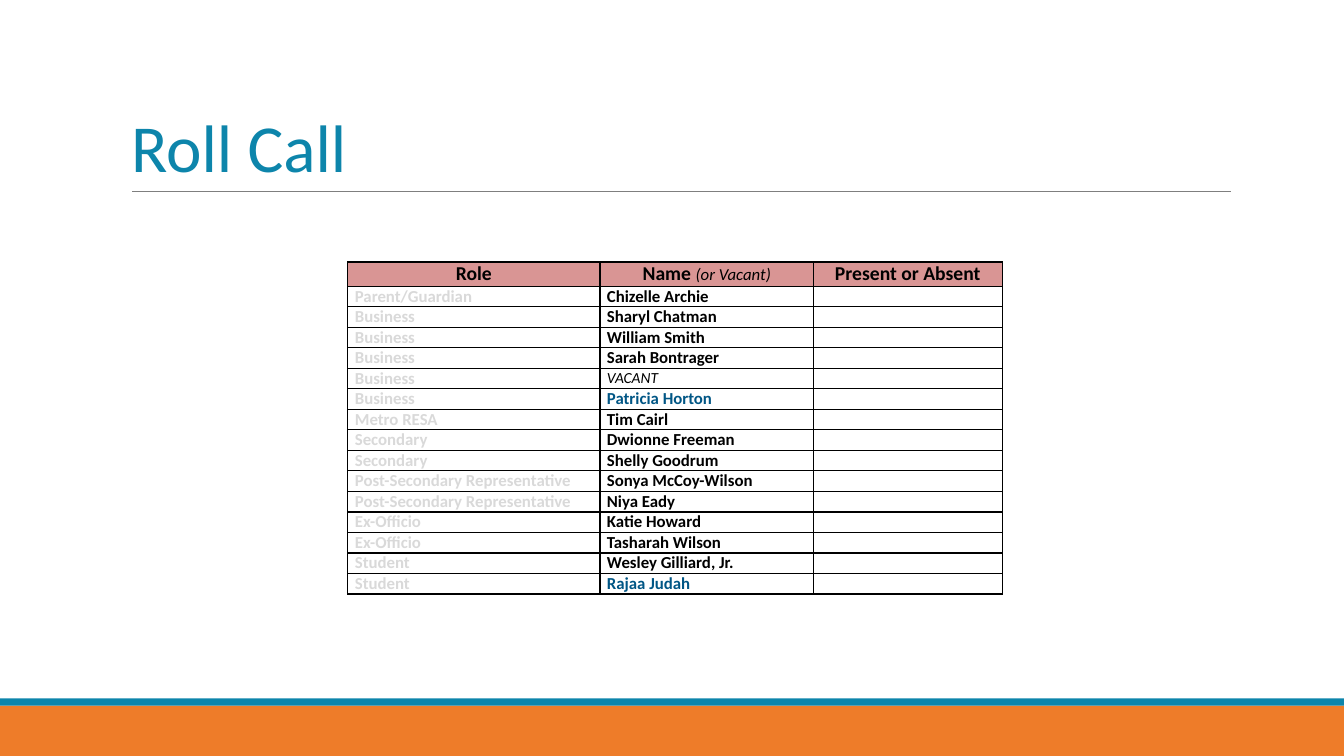
from lxml import etree
from pptx import Presentation, util as u
from pptx.dml.color import RGBColor
from pptx.enum import shapes, text
from pptx.oxml import ns

COLORS = {
    "orange": "EE7C29",
    "teal": "0D85AB",
    "rule": "7F7F7F",
    "header": "D99594",
    "role": "D9D9D9",
    "name": "000000",
    "highlight": "005685",
    "border": "000000",
}
FONT = "Calibri"
HEADER = {"size": u.Pt(14), "bold": True}
HEADER_NOTE = {"size": u.Pt(12), "bold": False, "italic": True}
ENTRY = {"size": u.Pt(12), "bold": True}
VACANCY = {"size": u.Pt(11), "bold": False, "italic": True}
COLUMN_WIDTHS = (2.5, 2.12, 1.87)
HEADINGS = (
    [("Role", HEADER)],
    [("Name ", HEADER), ("(or Vacant)", HEADER_NOTE)],
    [("Present or Absent", HEADER)],
)
MEMBERS = (
    ("Parent/Guardian", "Chizelle Archie"),
    ("Business", "Sharyl Chatman"),
    ("Business", "William Smith"),
    ("Business", "Sarah Bontrager"),
    ("Business", "VACANT"),
    ("Business", "Patricia Horton"),
    ("Metro RESA", "Tim Cairl"),
    ("Secondary", "Dwionne Freeman"),
    ("Secondary", "Shelly Goodrum"),
    ("Post-Secondary Representative", "Sonya McCoy-Wilson"),
    ("Post-Secondary Representative", "Niya Eady"),
    ("Ex-Officio", "Katie Howard"),
    ("Ex-Officio", "Tasharah Wilson"),
    ("Student", "Wesley Gilliard, Jr."),
    ("Student", "Rajaa Judah"),
)
HIGHLIGHTED = {"Patricia Horton", "Rajaa Judah"}


def color(key):
    return RGBColor.from_string(COLORS[key])


def apply_format(target, values):
    for attribute, value in values.items():
        setattr(target, attribute, value)


def format_font(font, values, color_key):
    apply_format(font, {"name": FONT, **values})
    font.color.rgb = color(color_key)


def add_band(slide, left, top, width, height, color_key):
    band = slide.shapes.add_shape(
        shapes.MSO_SHAPE.RECTANGLE, *map(u.Inches, (left, top, width, height)))
    band.shadow.inherit = False
    band.fill.solid()
    band.fill.fore_color.rgb = color(color_key)
    band.line.fill.background()


def add_footer(slide, left, top, width, height):
    stripe = 0.07
    add_band(slide, left, top + stripe, width, height - stripe, "orange")
    add_band(slide, left, top, width, stripe, "teal")


def add_title(slide, left, top, width, height):
    bottom = top + height
    rule = slide.shapes.add_connector(
        shapes.MSO_CONNECTOR.STRAIGHT,
        *map(u.Inches, (left + 0.11, bottom, left + width + 0.01, bottom)))
    rule.line.color.rgb = color("rule")
    rule.line.width = u.Pt(0.75)
    etree.SubElement(rule._element.spPr, ns.qn("a:effectLst"))

    title = slide.shapes.title
    apply_format(title, dict(zip(
        ("left", "top", "width", "height"),
        map(u.Inches, (left, top, width, height)))))
    frame = title.text_frame
    frame.text = "Roll Call"
    apply_format(frame, {
        "vertical_anchor": text.MSO_ANCHOR.BOTTOM,
        "word_wrap": True,
        "auto_size": text.MSO_AUTO_SIZE.NONE,
        "margin_left": u.Inches(0.1),
        "margin_right": u.Inches(0.1),
        "margin_top": u.Inches(0.05),
        "margin_bottom": u.Inches(0.05),
    })
    heading = frame.paragraphs[0]
    apply_format(heading, {"alignment": text.PP_ALIGN.LEFT, "line_spacing": 0.85})
    format_font(heading.runs[0].font, {"size": u.Pt(48)}, "teal")


def add_borders(cell):
    properties = cell._tc.get_or_add_tcPr()
    for position, side in enumerate(("lnL", "lnR", "lnT", "lnB")):
        border = etree.Element(ns.qn(f"a:{side}"), w=str(u.Pt(1)))
        fill = etree.SubElement(border, ns.qn("a:solidFill"))
        etree.SubElement(fill, ns.qn("a:srgbClr"), val=COLORS["border"])
        properties.insert(position, border)


def fill_cell(cell, runs, color_key, is_header=False):
    apply_format(cell, {
        "margin_left": u.Inches(0.07),
        "margin_right": u.Inches(0.07),
        "margin_top": 0,
        "margin_bottom": 0,
        "vertical_anchor": text.MSO_ANCHOR.MIDDLE if is_header else text.MSO_ANCHOR.TOP,
    })
    if is_header:
        cell.fill.solid()
        cell.fill.fore_color.rgb = color("header")
    else:
        cell.fill.background()
    add_borders(cell)
    paragraph = cell.text_frame.paragraphs[0]
    paragraph.alignment = text.PP_ALIGN.CENTER if is_header else text.PP_ALIGN.LEFT
    format_font(paragraph.font, ENTRY, color_key)
    if not runs:
        end = etree.SubElement(paragraph._p, ns.qn("a:endParaRPr"), sz="1200")
        etree.SubElement(end, ns.qn("a:latin"), typeface=FONT)
    for content, values in runs:
        run = paragraph.add_run()
        run.text = content
        format_font(run.font, values, color_key)


def add_roll(slide, left, top, width, height):
    header_height = 0.24
    row_height = (height - header_height) / len(MEMBERS)
    roll = slide.shapes.add_table(
        len(MEMBERS) + 1, len(HEADINGS),
        *map(u.Inches, (left, top, width, height))).table
    apply_format(roll, {"first_row": False, "horz_banding": False})
    for column, column_width in zip(roll.columns, COLUMN_WIDTHS):
        column.width = u.Inches(column_width)
    for index, row in enumerate(roll.rows):
        row.height = u.Inches(row_height if index else header_height)
    for cell, runs in zip(roll.rows[0].cells, HEADINGS):
        fill_cell(cell, runs, "name", is_header=True)
    for index, (role, name) in enumerate(MEMBERS, start=1):
        role_cell, name_cell, attendance_cell = roll.rows[index].cells
        fill_cell(role_cell, [(role, ENTRY)], "role")
        fill_cell(name_cell, [(name, VACANCY if name == "VACANT" else ENTRY)],
                  "highlight" if name in HIGHLIGHTED else "name")
        fill_cell(attendance_cell, [], "name")


def main():
    deck = Presentation()
    deck.slide_width = u.Inches(13.33)
    deck.slide_height = u.Inches(7.5)
    slide = deck.slides.add_slide(deck.slide_layouts.get_by_name("Title Only"))
    add_footer(slide, 0, 6.93, 13.33, 0.57)
    add_title(slide, 1.2, 0.31, 11, 1.59)
    add_roll(slide, 3.45, 2.6, sum(COLUMN_WIDTHS), 3.23)
    deck.save("out.pptx")


if __name__ == "__main__":
    main()
